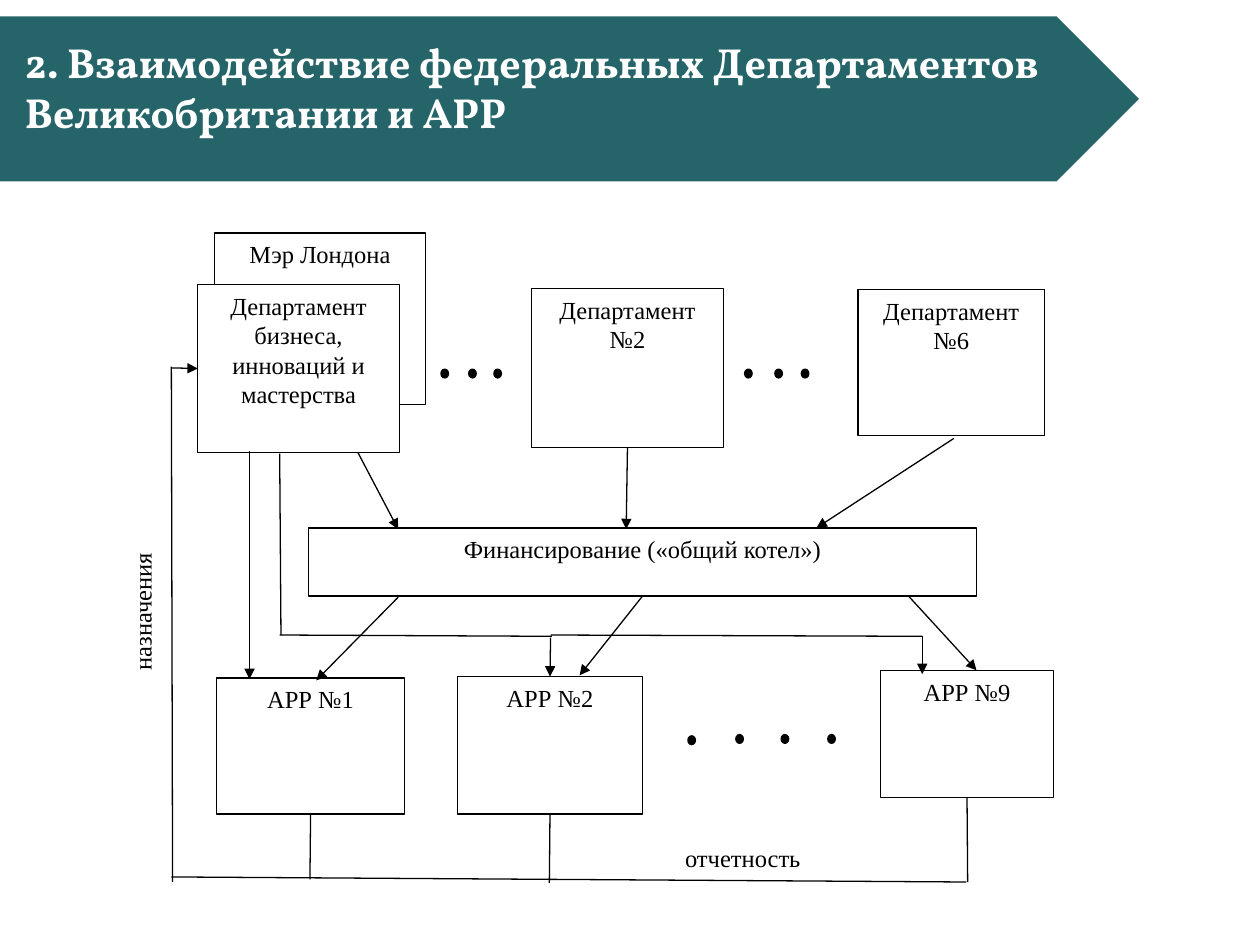
from dataclasses import dataclass
from typing import Optional

from lxml import etree
from pptx import Presentation
from pptx.dml.color import RGBColor
from pptx.enum.shapes import MSO_CONNECTOR, MSO_SHAPE
from pptx.enum.text import MSO_ANCHOR, PP_ALIGN
from pptx.oxml.ns import qn
from pptx.util import Pt

PX = 9144  # 100 px to the inch
TEAL = RGBColor(0x25, 0x65, 0x69)
WHITE = RGBColor(0xFF, 0xFF, 0xFF)
BLACK = RGBColor(0, 0, 0)
RECT, ELLIPSE, PENTAGON = MSO_SHAPE.RECTANGLE, MSO_SHAPE.OVAL, MSO_SHAPE.PENTAGON
STRAIGHT = MSO_CONNECTOR.STRAIGHT
CENTER, TOP = PP_ALIGN.CENTER, MSO_ANCHOR.TOP
SIDE_TOP, SIDE_LEFT, SIDE_BOTTOM = 0, 1, 2
LINE_WIDTH = Pt(0.75)
TITLE_FONT = {"name": "Vollkorn", "size": Pt(24), "bold": True}
BODY_FONT = {"name": "Times New Roman", "size": Pt(14)}


@dataclass(frozen=True)
class Box:
    key: str
    text: str
    x: int
    y: int
    w: int
    h: int
    outlined: bool = True
    vertical: bool = False


@dataclass(frozen=True)
class Link:
    x1: int
    y1: int
    x2: int
    y2: int
    arrow: bool = False
    begin: Optional[tuple[str, int]] = None
    end: Optional[tuple[str, int]] = None


TITLE = ("2. Взаимодействие федеральных Департаментов", "Великобритании и АРР")

BOXES = [
    Box("reporting", "отчетность", 480, 664, 219, 41, outlined=False),
    Box("appointments", "назначения", 96, 373, 48, 225, outlined=False, vertical=True),
    Box("mayor", "Мэр Лондона", 170, 185, 168, 136),
    Box("business", "Департамент бизнеса, инноваций и мастерства", 157, 226, 160, 133),
    Box("dept2", "Департамент №2", 422, 229, 152, 126),
    Box("dept6", "Департамент №6", 681, 230, 148, 116),
    Box("funding", "Финансирование («общий котел»)", 245, 419, 530, 54),
    Box("agency1", "АРР №1", 172, 538, 149, 108),
    Box("agency2", "АРР №2", 363, 537, 147, 109),
    Box("agency9", "АРР №9", 699, 532, 137, 101),
]

LINKS = [
    # Reporting: agencies back to the business department
    Link(136, 291, 137, 700),
    Link(136, 696, 767, 700),
    Link(768, 633, 768, 700, begin=("agency9", SIDE_BOTTOM)),
    Link(437, 646, 436, 701, begin=("agency2", SIDE_BOTTOM)),
    Link(246, 646, 246, 698, begin=("agency1", SIDE_BOTTOM)),
    Link(136, 292, 157, 292, True, end=("business", SIDE_LEFT)),
    # Appointments: business department to the agencies
    Link(198, 358, 198, 539, True),
    Link(222, 360, 223, 504),
    Link(222, 504, 438, 505),
    Link(437, 506, 437, 537, True, end=("agency2", SIDE_TOP)),
    Link(437, 504, 732, 505),
    Link(732, 505, 732, 535, True),
    # Funding: departments to the common pot
    Link(284, 359, 316, 420, True),
    Link(498, 355, 497, 420, True, begin=("dept2", SIDE_BOTTOM)),
    Link(757, 348, 648, 419, True),
    # Funding: common pot to the agencies
    Link(316, 474, 251, 540, True),
    Link(510, 473, 460, 536, True, begin=("funding", SIDE_BOTTOM)),
    Link(721, 473, 775, 532, True),
]

DOT_W, DOT_H = 6, 7
DOT_ROWS = [
    (293, (350, 372, 392, 591, 615, 636)),
    (584, (546,)),
    (583, (584, 620, 657)),
]


def add_block(slide, kind, x: int, y: int, w: int, h: int, fill: RGBColor, outlined: bool):
    """Add a filled preset shape without shadow."""
    sp = slide.shapes.add_shape(kind, x * PX, y * PX, w * PX, h * PX)
    sp.shadow.inherit = False
    sp.fill.solid()
    sp.fill.fore_color.rgb = fill
    if outlined:
        sp.line.color.rgb = BLACK
        sp.line.width = LINE_WIDTH
    else:
        sp.line.fill.background()
    return sp


def write_run(p, text: str, font: dict, color: RGBColor) -> None:
    r = p.add_run()
    r.text = text
    for name, value in font.items():
        setattr(r.font, name, value)
    r.font.color.rgb = color


def draw_title(slide) -> None:
    add_block(slide, PENTAGON, 0, 13, 904, 131, TEAL, False)
    tf = slide.shapes.add_textbox(10 * PX, 24 * PX, 827 * PX, 91 * PX).text_frame
    tf.word_wrap = False
    for i, text in enumerate(TITLE):
        p = tf.add_paragraph() if i else tf.paragraphs[0]
        write_run(p, text, TITLE_FONT, WHITE)


def draw_box(slide, box: Box):
    sp = add_block(slide, RECT, box.x, box.y, box.w, box.h, WHITE, box.outlined)
    tf = sp.text_frame
    tf.word_wrap = True
    tf.vertical_anchor = TOP
    if box.vertical:
        tf._txBody.bodyPr.set("vert", "vert270")
    p = tf.paragraphs[0]
    p.alignment = CENTER
    write_run(p, box.text, BODY_FONT, BLACK)
    return sp


def draw_link(slide, link: Link, boxes: dict) -> None:
    ends = (v * PX for v in (link.x1, link.y1, link.x2, link.y2))
    line = slide.shapes.add_connector(STRAIGHT, *ends)
    line.line.color.rgb = BLACK
    line.line.width = LINE_WIDTH
    if link.begin:
        key, side = link.begin
        line.begin_connect(boxes[key], side)
    if link.end:
        key, side = link.end
        line.end_connect(boxes[key], side)
    if link.arrow:
        etree.SubElement(line.line._get_or_add_ln(), qn("a:tailEnd"), type="triangle")
    etree.SubElement(line._element.spPr, qn("a:effectLst"))


def main() -> None:
    prs = Presentation()
    prs.slide_width, prs.slide_height = 1000 * PX, 750 * PX
    slide = prs.slides.add_slide(prs.slide_layouts[6])
    draw_title(slide)
    boxes = {box.key: draw_box(slide, box) for box in BOXES}
    for link in LINKS:
        draw_link(slide, link, boxes)
    for y, columns in DOT_ROWS:
        for x in columns:
            add_block(slide, ELLIPSE, x, y, DOT_W, DOT_H, BLACK, True)
    prs.save("out.pptx")


if __name__ == "__main__":
    main()
